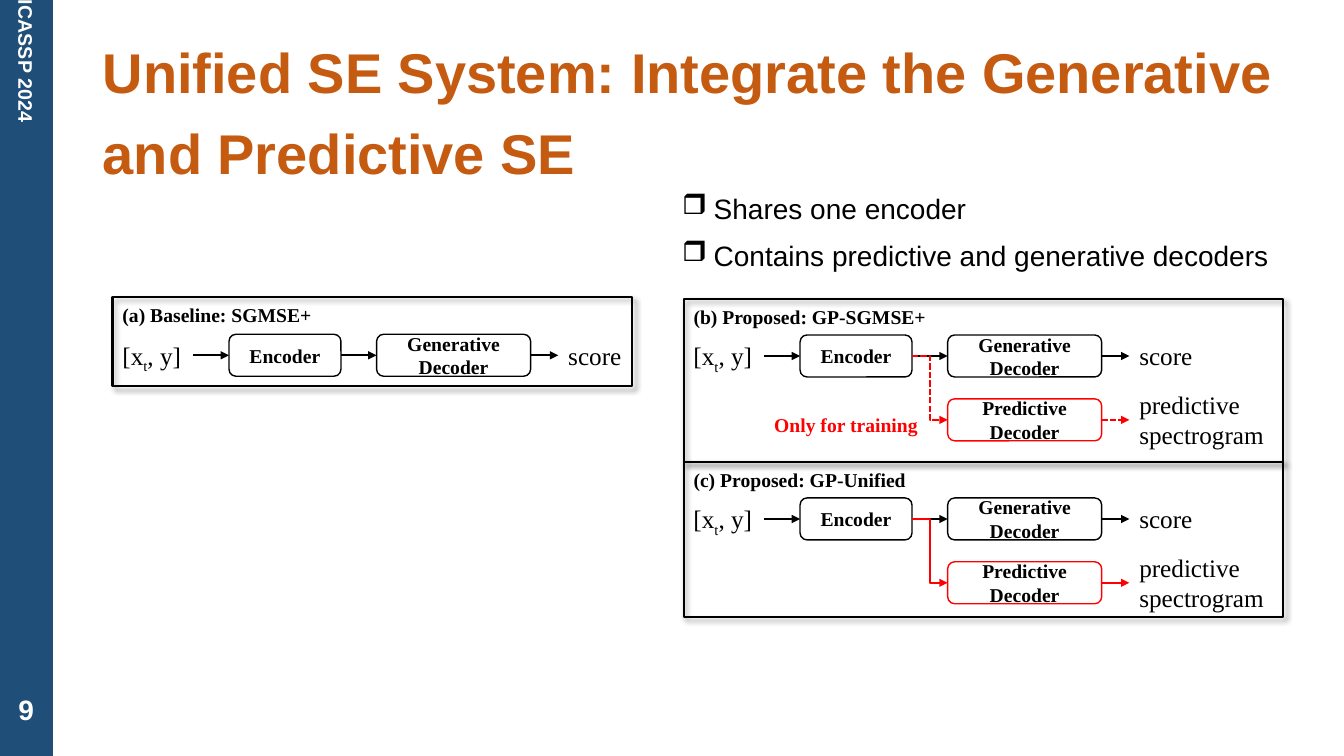
"""Build the slide that compares a baseline and two unified speech enhancement systems."""
from dataclasses import dataclass, replace

from lxml import etree
from pptx import Presentation
from pptx import util as u
from pptx.dml.color import RGBColor
from pptx.enum import dml, shapes, text
from pptx.oxml.ns import qn


@dataclass(frozen=True)
class Style:
    """Describe the look of a run."""
    font: str
    size: float
    color: str
    bold: bool = False


@dataclass(frozen=True)
class Theme:
    """Hold the colours and type styles."""
    bar: str = "1F4E79"
    paper: str = "FFFFFF"
    ink: str = "000000"
    accent: str = "FF0000"
    title: Style = Style("Arial", 40, "C55A11", True)
    side: Style = Style("Arial", 14, "FFFFFF", True)
    number: Style = Style("Arial", 20, "FFFFFF", True)
    bullet: Style = Style("Arial", 20, "000000")
    block: Style = Style("Times New Roman", 14, "000000", True)
    signal: Style = Style("Times New Roman", 18, "000000")


THEME = Theme()
CENTER = text.PP_ALIGN.CENTER
INPUT = (("[x", 0), ("t", -25000), (", y]", 0))


def rgb(color):
    """Turn a hex code into a colour."""
    return RGBColor.from_string(color)


def points(*lengths):
    """Turn numbers into point lengths."""
    return [u.Pt(length) for length in lengths]


def write(shape, content, style, align=None, spacing=None):
    """Write a string or (text, baseline) pairs into the first paragraph."""
    paragraph = shape.text_frame.paragraphs[0]
    paragraph.alignment = align
    paragraph.line_spacing = spacing
    pairs = ((content, 0),) if isinstance(content, str) else content
    for words, baseline in pairs:
        run = paragraph.add_run()
        run.text = words
        run.font.name, run.font.size = style.font, u.Pt(style.size)
        run.font.bold = style.bold
        run.font.color.rgb = rgb(style.color)
        if baseline:
            run._r.get_or_add_rPr().set("baseline", str(baseline))
    return paragraph


def add_label(parent, box, content, style, wrap=False, spacing=None):
    """Add a text box that grows with its text."""
    label = parent.shapes.add_textbox(*points(*box))
    label.text_frame.word_wrap = wrap
    label.text_frame.auto_size = text.MSO_AUTO_SIZE.SHAPE_TO_FIT_TEXT
    write(label, content, style, spacing=spacing)
    return label


def add_box(parent, kind, box, fill, line, weight):
    """Add a preset shape, unfilled when fill is None."""
    shape = parent.shapes.add_shape(kind, *points(*box))
    shape.shadow.inherit = False
    if fill:
        shape.fill.solid()
        shape.fill.fore_color.rgb = rgb(fill)
    else:
        shape.fill.background()
    shape.line.color.rgb = rgb(line)
    shape.line.width = u.Pt(weight)
    return shape


def add_block(parent, box, words, line=THEME.ink):
    """Add a rounded block of the network."""
    block = add_box(parent, shapes.MSO_SHAPE.ROUNDED_RECTANGLE, box, THEME.paper, line, 1)
    block.text_frame.word_wrap = True
    write(block, words, THEME.block, CENTER)
    return block


def add_arrow(parent, source, target, color=THEME.ink, dashed=False, bent=False):
    """Join the right side of source to the left side of target."""
    kind = shapes.MSO_CONNECTOR.ELBOW if bent else shapes.MSO_CONNECTOR.STRAIGHT
    arrow = parent.shapes.add_connector(
        kind, source.left + source.width, source.top + source.height // 2,
        target.left, target.top + target.height // 2)
    arrow.begin_connect(source, 3)
    arrow.end_connect(target, 1)
    arrow.line.color.rgb = rgb(color)
    arrow.line.width = u.Pt(1.5)
    if dashed:
        arrow.line.dash_style = dml.MSO_LINE.SQUARE_DOT
    properties = arrow.element.spPr
    etree.SubElement(properties.find(qn("a:ln")), qn("a:tailEnd"), type="triangle")
    etree.SubElement(properties, qn("a:effectLst"))


def add_frame(parent, box):
    """Add the panel outline with its soft shadow."""
    frame = add_box(parent, shapes.MSO_SHAPE.RECTANGLE, box, None, THEME.ink, 1.5)
    effects = frame.element.spPr.find(qn("a:effectLst"))
    shadow = etree.SubElement(effects, qn("a:outerShdw"), blurRad=str(u.Pt(4)),
                              dist=str(u.Pt(3)), dir="2700000", algn="tl", rotWithShape="0")
    color = etree.SubElement(shadow, qn("a:srgbClr"), val=THEME.ink)
    etree.SubElement(color, qn("a:alpha"), val="40000")


def add_panel(slide, caption, frame, row, caption_width, predictive=False, note=None):
    """Add one system diagram; a note marks a training-only branch."""
    panel = slide.shapes.add_group_shape()
    left, top = frame[:2]
    encoder_left, decoder_left, output_left = left + 83.2, left + 188.6, left + 318.4
    signal = add_label(panel, (left, row + 0.6, 57.6, 28.8), INPUT, THEME.signal)
    encoder = add_block(panel, (encoder_left, row, 80, 30), "Encoder")
    generative = add_block(panel, (decoder_left, row, 110, 30), "Generative Decoder")
    score = add_label(panel, (output_left, row + 0.6, 52.6, 28.8), "score", THEME.signal)
    for source, target in ((signal, encoder), (encoder, generative), (generative, score)):
        add_arrow(panel, source, target)
    if predictive:
        decoder = add_block(panel, (decoder_left, row + 45.6, 110, 30),
                            "Predictive Decoder", THEME.accent)
        spectrogram = add_label(panel, (output_left, row + 35.1, 110, 51),
                                "predictive spectrogram", THEME.signal, wrap=True)
        dashed = note is not None
        add_arrow(panel, encoder, decoder, THEME.accent, dashed, bent=True)
        add_arrow(panel, decoder, spectrogram, THEME.accent, dashed)
    if note:
        add_label(panel, (left + 57.6, row + 51.8, 118, 24.2), note,
                  replace(THEME.block, color=THEME.accent), wrap=True)
    add_label(panel, (left, top + 0.7, caption_width, 24.2), caption, THEME.block)
    add_frame(panel, frame)


def add_bullet(slide, box, words):
    """Add a line with a square bullet."""
    label = add_label(slide, box, words, THEME.bullet, wrap=True, spacing=1.5)
    properties = label.text_frame.paragraphs[0]._p.get_or_add_pPr()
    properties.set("marL", str(u.Pt(22.5)))
    properties.set("indent", str(u.Pt(-22.5)))
    etree.SubElement(properties, qn("a:buChar"), char="❒")


def add_sidebar(slide):
    """Add the blue bar with the event name and the slide number."""
    rectangle = shapes.MSO_SHAPE.RECTANGLE
    add_box(slide, rectangle, (0, 487.4, 37.6, 52.6), THEME.bar, THEME.bar, 1)
    bar = add_box(slide, rectangle, (0, 0, 37.6, 487.4), THEME.bar, THEME.bar, 1)
    frame = bar.text_frame
    frame.margin_top, frame.margin_bottom = points(0, 254.9)
    bar.element.find(".//" + qn("a:bodyPr")).set("vert", "eaVert")
    write(bar, "ICASSP 2024", THEME.side, CENTER)
    number = slide.shapes.add_textbox(*points(0, 488.2, 37.6, 37.6))
    number.text_frame.word_wrap = True
    number.text_frame.vertical_anchor = text.MSO_ANCHOR.MIDDLE
    write(number, "9", THEME.number, CENTER)


def add_title(slide, words):
    """Place and fill the title placeholder."""
    title = slide.shapes.title
    title.left, title.top, title.width, title.height = points(66.2, 14.4, 871.2, 121)
    title.text_frame.word_wrap = True
    title.text_frame.auto_size = text.MSO_AUTO_SIZE.NONE
    title.text_frame.vertical_anchor = text.MSO_ANCHOR.MIDDLE
    write(title, words, THEME.title, text.PP_ALIGN.LEFT, 1.2)


def main():
    """Build and save the slide."""
    presentation = Presentation()
    presentation.slide_width, presentation.slide_height = points(960, 540)
    slide = presentation.slides.add_slide(presentation.slide_layouts[5])
    add_sidebar(slide)
    add_title(slide, "Unified SE System: Integrate the Generative and Predictive SE")
    add_bullet(slide, (480.2, 121, 447.8, 38.9), "Shares one encoder")
    add_panel(slide, "(a) Baseline: SGMSE+", (80.4, 212.2, 371, 63.8), 238.8, 150.5)
    add_panel(slide, "(b) Proposed: GP-SGMSE+", (488.3, 213.8, 428.4, 116), 239.3, 181.4,
              predictive=True, note="Only for training")
    add_panel(slide, "(c) Proposed: GP-Unified", (488.3, 329.8, 428.4, 111.2), 355.7, 167,
              predictive=True)
    add_bullet(slide, (480.2, 154.8, 481, 38.9), "Contains predictive and generative decoders")
    presentation.save("out.pptx")


if __name__ == "__main__":
    main()
